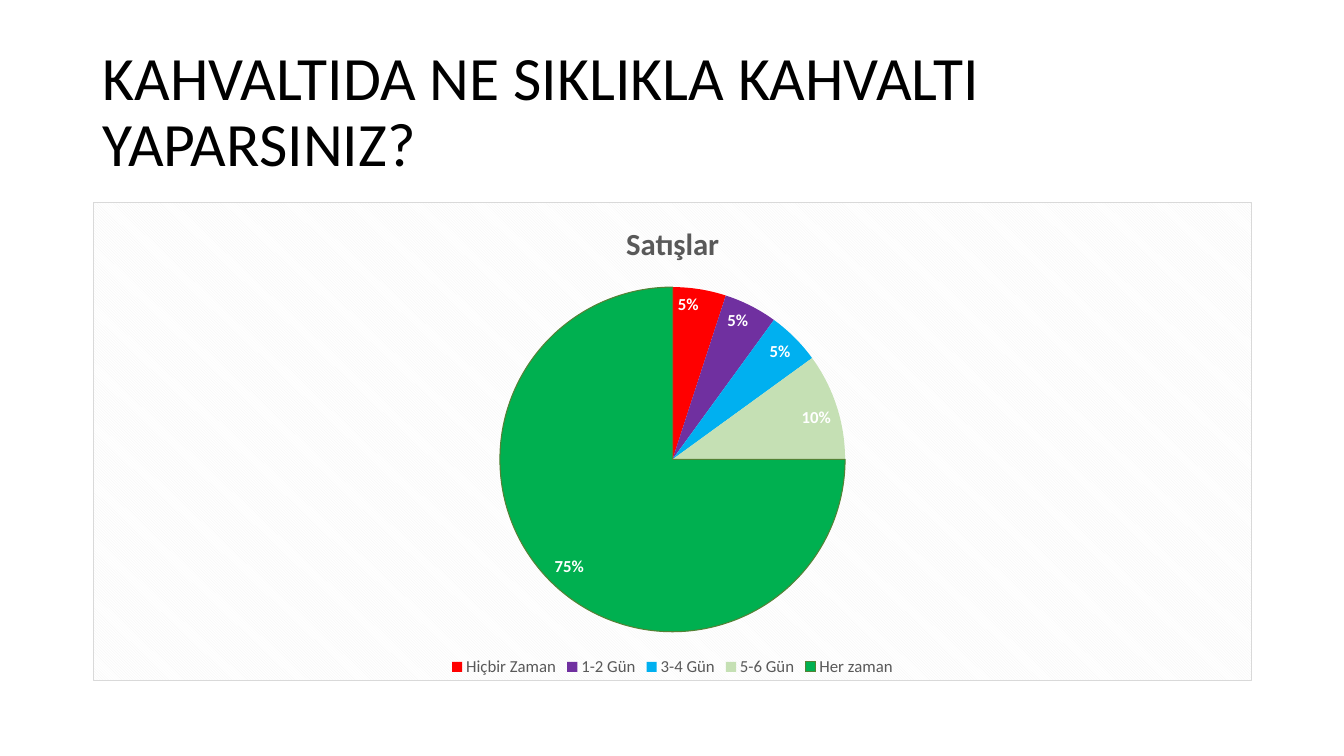
from dataclasses import dataclass

from lxml import etree
from pptx import Presentation
from pptx.chart import data as cd
from pptx.dml.color import RGBColor
from pptx.enum import chart as ec, text as et
from pptx.util import Inches, Pt

FACE = "Calibri"
BLACK = RGBColor(0x00, 0x00, 0x00)
WHITE = RGBColor(0xFF, 0xFF, 0xFF)
GRAY = RGBColor(0x59, 0x59, 0x59)
RED = RGBColor(0xFF, 0x00, 0x00)
PURPLE = RGBColor(0x70, 0x30, 0xA0)
BLUE = RGBColor(0x00, 0xB0, 0xF0)
PALE = RGBColor(0xC5, 0xE0, 0xB4)
GREEN = RGBColor(0x00, 0xB0, 0x50)
OLIVE = RGBColor(0x54, 0x82, 0x35)

LEFT, WIDTH = Inches(0.92), Inches(11.5)

FRAME = """
<c:spPr xmlns:c="http://schemas.openxmlformats.org/drawingml/2006/chart"
        xmlns:a="http://schemas.openxmlformats.org/drawingml/2006/main">
  <a:pattFill prst="dkDnDiag">
    <a:fgClr><a:srgbClr val="F2F2F2"/></a:fgClr>
    <a:bgClr><a:srgbClr val="FFFFFF"/></a:bgClr>
  </a:pattFill>
  <a:ln w="9525"><a:solidFill><a:srgbClr val="D9D9D9"/></a:solidFill></a:ln>
</c:spPr>"""


@dataclass
class Slice:
    name: str
    value: int
    color: RGBColor
    edge: RGBColor | None = None


SLICES = [
    Slice("Hiçbir Zaman", 5, RED),
    Slice("1-2 Gün", 5, PURPLE),
    Slice("3-4 Gün", 5, BLUE),
    Slice("5-6 Gün", 10, PALE),
    Slice("Her zaman", 75, GREEN, OLIVE),
]


def apply(item, values: dict) -> None:
    for name, value in values.items():
        setattr(item, name, value)


def style(font, size: float, color: RGBColor, bold: bool = False) -> None:
    apply(font, {"name": FACE, "size": Pt(size), "bold": bold})
    font.color.rgb = color


def add_title(slide, words: str) -> None:
    box = slide.shapes.add_textbox(LEFT, Inches(0.4), WIDTH, Inches(1.45))
    frame = box.text_frame
    apply(frame, {"word_wrap": True, "vertical_anchor": et.MSO_ANCHOR.MIDDLE})
    line = frame.paragraphs[0]
    line.line_spacing = 0.9
    run = line.add_run()
    run.text = words
    style(run.font, 44, BLACK)


def add_pie(slide, name: str, slices: list[Slice]) -> None:
    data = cd.CategoryChartData()
    data.categories = [part.name for part in slices]
    data.add_series(name, [part.value for part in slices])
    chart = slide.shapes.add_chart(
        ec.XL_CHART_TYPE.PIE, LEFT, Inches(2), WIDTH, Inches(4.76), data
    ).chart
    style(chart.font, 10, BLACK)
    chart._chartSpace.chart.addnext(etree.fromstring(FRAME))

    chart.has_title = True
    title = chart.chart_title
    title.include_in_layout = False
    title.text_frame.text = name
    style(title.text_frame.paragraphs[0].runs[0].font, 22, GRAY, True)

    chart.has_legend = True
    apply(chart.legend, {
        "position": ec.XL_LEGEND_POSITION.BOTTOM,
        "include_in_layout": False,
    })
    style(chart.legend.font, 12, GRAY)

    plot = chart.plots[0]
    plot.vary_by_categories = True
    series = plot.series[0]
    for index, part in enumerate(slices):
        look = series.points[index].format
        look.fill.solid()
        look.fill.fore_color.rgb = part.color
        if part.edge is None:
            look.line.fill.background()
        else:
            look.line.color.rgb = part.edge
            look.line.width = Pt(0.75)

    labels = series.data_labels
    apply(labels, {
        "show_percentage": True,
        "show_value": False,
        "show_legend_key": False,
        "number_format": "0%",
        "number_format_is_linked": False,
        "position": ec.XL_LABEL_POSITION.INSIDE_END,
    })
    style(labels.font, 12, WHITE, True)


def main() -> None:
    deck = Presentation()
    apply(deck, {"slide_width": Inches(13.33), "slide_height": Inches(7.5)})
    slide = deck.slides.add_slide(deck.slide_layouts[6])
    add_title(slide, "KAHVALTIDA NE SIKLIKLA KAHVALTI YAPARSINIZ?")
    add_pie(slide, "Satışlar", SLICES)
    deck.save("out.pptx")


if __name__ == "__main__":
    main()
